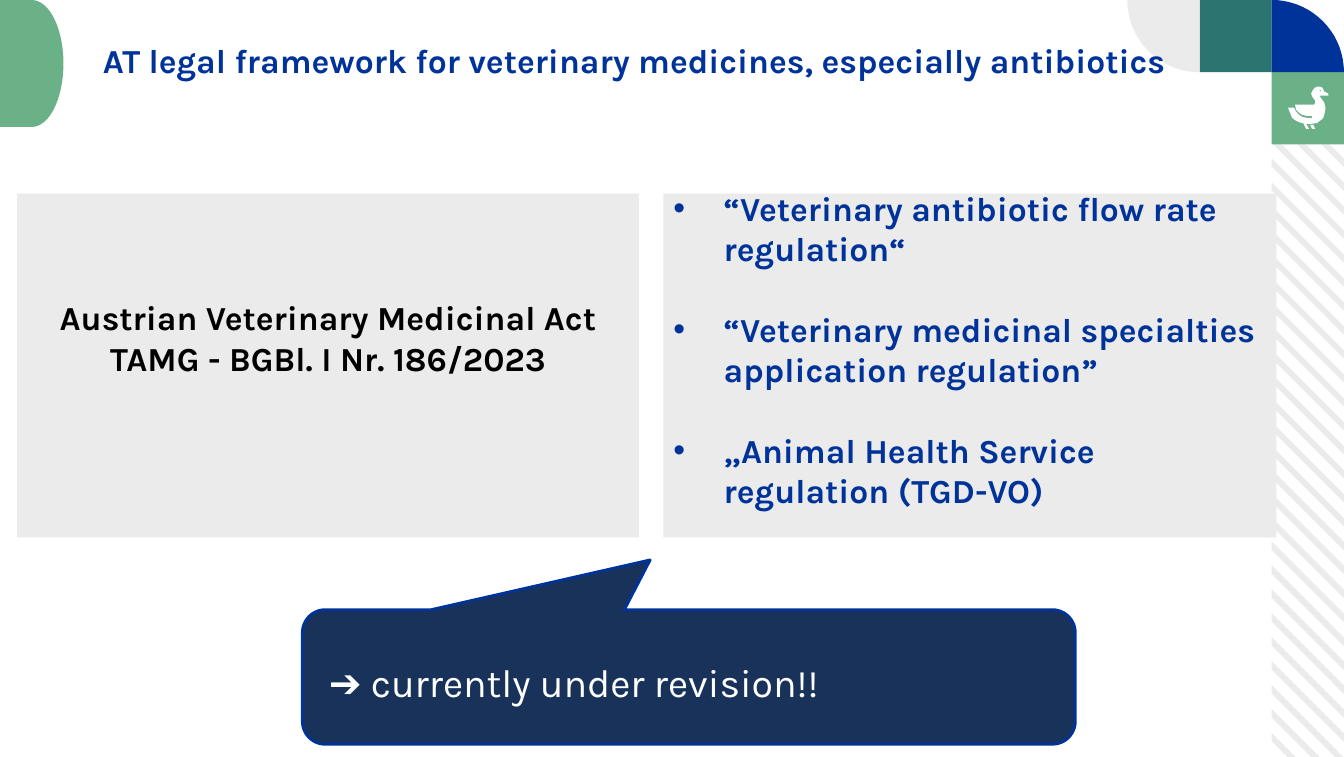
import math
from lxml import etree
from pptx import Presentation
from pptx import util as u
from pptx.dml.color import RGBColor
from pptx.enum import shapes, text
from pptx.oxml import ns

NAVY, GREEN, TEAL, GREY = "003399", "6BB188", "2C7470", "ECEBEB"
WIDTH, HEIGHT, TILE = 33.87, 19.07, 1.82

deck = Presentation()
deck.slide_width, deck.slide_height = u.Cm(WIDTH), u.Cm(HEIGHT)
slide = deck.slides.add_slide(deck.slide_layouts[6])


def paint(shape, fill, line=None):
    shape.shadow.inherit = False
    shape.fill.solid()
    shape.fill.fore_color.rgb = RGBColor.from_string(fill)
    if line:
        shape.line.color.rgb = RGBColor.from_string(line)
        shape.line.width = u.Pt(2)
    else:
        shape.line.fill.background()


def outline(contours, fill):
    contours = [[(u.Cm(x), u.Cm(y)) for x, y in points] for points in contours]
    builder = slide.shapes.build_freeform(*contours[0][0], scale=1)
    for number, points in enumerate(contours):
        if number:
            builder.move_to(*points[0])
        builder.add_line_segments(points[1:], close=True)
    paint(builder.convert_to_shape(), fill)


# Diagonal stripes, cut off at the edges of the right-hand strip
strip_left, strip_top = WIDTH - TILE, 2 * TILE
first_stripe, last_stripe, thickness = 3.99, 18.47, 0.21
step = (last_stripe - first_stripe) / 24
stripes = []
for number in range(-3, 25):
    upper = first_stripe + number * step
    corners = []
    for start in (upper, upper + thickness):
        ends = max(0, strip_top - start), min(TILE, HEIGHT - start)
        corners.append([(strip_left + run, start + run) for run in ends])
    stripes.append(corners[0] + corners[1][::-1])
outline(stripes, GREY)

# Corner tiles: two squares and two quarter discs
for left, top, fill in ((strip_left - TILE, 0, TEAL), (strip_left, TILE, GREEN)):
    tile = slide.shapes.add_shape(shapes.MSO_SHAPE.RECTANGLE, u.Cm(left), u.Cm(top),
                                  u.Cm(TILE), u.Cm(TILE))
    paint(tile, fill)
for x, y, start, fill in ((strip_left, TILE, 270, NAVY), (strip_left - TILE, 0, 90, GREY)):
    arc = [math.radians(start + 5 * n) for n in range(19)]
    outline([[(x, y)] + [(x + TILE * math.cos(a), y + TILE * math.sin(a)) for a in arc]], fill)

# Goose: body, eye and foot in hundredths of an inch
goose = [
    [(40, 7), (36, 5), (35, 3), (34, 1), (31, 0), (29, 0), (27, 1), (25, 3), (24, 5),
     (23, 7), (24, 10), (27, 14), (27, 16), (26, 18), (25, 18), (7, 18), (8, 23),
     (11, 26), (14, 28), (18, 29), (24, 29), (24, 31), (18, 31), (14, 30), (11, 28),
     (8, 25), (6, 21), (0, 21), (2, 26), (4, 31), (8, 34), (13, 36), (15, 36), (18, 42),
     (21, 42), (18, 37), (24, 37), (29, 36), (33, 33), (35, 31), (36, 28), (37, 23),
     (37, 20), (36, 16), (31, 9), (40, 9)],
    [(32, 3), (33, 4), (32, 5), (31, 4)],
    [(27, 42), (25, 38), (22, 38), (24, 42)],
]
outline([[(32.46 + x * 0.0254, 2.18 + y * 0.0254) for x, y in part] for part in goose], "FFFFFF")

# Half disc at the left edge
half_disc = slide.shapes.add_shape(shapes.MSO_SHAPE.FLOWCHART_DELAY, 0, 0, u.Cm(1.6), u.Cm(3.2))
paint(half_disc, GREEN)

# Title, law, regulations and the remark on them
title = slide.shapes.add_textbox(u.Cm(2.11), u.Cm(0.88), u.Cm(27.74), u.Cm(1.32))
law = slide.shapes.add_shape(shapes.MSO_SHAPE.RECTANGLE, u.Cm(0.43), u.Cm(4.88),
                             u.Cm(15.67), u.Cm(8.66))
regulations = slide.shapes.add_shape(shapes.MSO_SHAPE.RECTANGLE, u.Cm(16.72), u.Cm(4.88),
                                     u.Cm(15.45), u.Cm(8.66))
remark = slide.shapes.add_shape(shapes.MSO_SHAPE.ROUNDED_RECTANGULAR_CALLOUT, u.Cm(7.62),
                                u.Cm(15.36), u.Cm(19.48), u.Cm(3.39))
for corner, value in enumerate((-0.05, -0.87, 0.17)):
    remark.adjustments[corner] = value
paint(law, GREY)
paint(regulations, GREY)
paint(remark, "18325A", NAVY)

MIDDLE, TOP = text.MSO_ANCHOR.MIDDLE, text.MSO_ANCHOR.TOP
CENTER, LEFT = text.PP_ALIGN.CENTER, text.PP_ALIGN.LEFT
contents = (
    (title, ["AT legal framework for veterinary medicines, especially antibiotics"], CENTER, NAVY,
     24, True, dict(vertical_anchor=TOP)),
    (law, ["Austrian Veterinary Medicinal Act TAMG - BGBl. I Nr. 186/2023"], CENTER, "000000",
     24, True, dict(vertical_anchor=MIDDLE, margin_bottom=u.Cm(1.53))),
    (regulations, ["“Veterinary antibiotic flow rate regulation“",
                   "“Veterinary medicinal specialties application regulation”",
                   "„Animal Health Service regulation (TGD-VO)"], LEFT, NAVY,
     24, True, dict(vertical_anchor=MIDDLE, margin_top=0, margin_bottom=u.Cm(0.83))),
    (remark, ["➔ currently under revision!!"], LEFT, "FFFFFF",
     28, False, dict(vertical_anchor=MIDDLE, margin_left=u.Cm(0.5), margin_top=u.Cm(0.36))),
)
for part, lines, align, colour, size, bold, layout in contents:
    frame = part.text_frame
    for key, value in dict(word_wrap=True, **layout).items():
        setattr(frame, key, value)
    for number, line in enumerate(lines):
        paragraph = frame.add_paragraph() if number else frame.paragraphs[0]
        paragraph.alignment = align
        if number:
            paragraph.space_before = u.Pt(28.8)
        if part is regulations:
            properties = paragraph._p.get_or_add_pPr()
            properties.set("marL", str(u.Cm(1.27)))
            properties.set("indent", str(-u.Cm(1.27)))
            etree.SubElement(properties, ns.qn("a:buFont"), typeface="Arial")
            etree.SubElement(properties, ns.qn("a:buChar"), char="•")
        run = paragraph.add_run()
        run.text = line
        for key, value in dict(name="Karla", size=u.Pt(size), bold=bold).items():
            setattr(run.font, key, value)
        run.font.color.rgb = RGBColor.from_string(colour)

deck.save("out.pptx")
